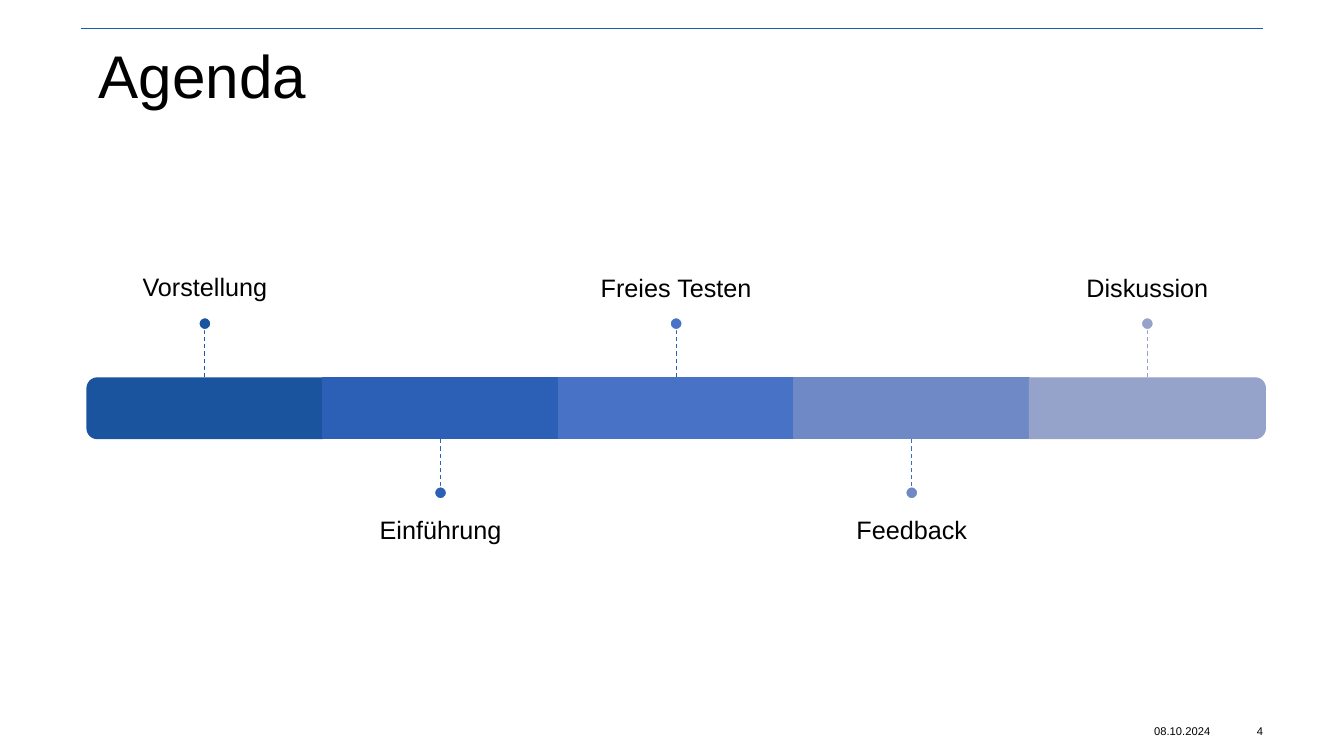
from dataclasses import dataclass

from lxml import etree
from pptx import Presentation
from pptx.dml.color import RGBColor
from pptx.enum import dml, shapes, text
from pptx.oxml.ns import qn
from pptx.util import Pt


@dataclass(frozen=True)
class Theme:
    font: str = "Arial"
    ink: str = "000000"
    paper: str = "FFFFFF"
    rule: str = "1E5CAF"
    title_size: float = 43
    label_size: float = 18
    footer_size: float = 8


THEME = Theme()

# label, segment colour, leader colour
STEPS = [
    ("Vorstellung", "1A539E", "1D57A5"),
    ("Einführung", "2C60B6", "2E63BB"),
    ("Freies Testen", "4772C5", "2A60B7"),
    ("Feedback", "6F89C6", "3B6CC6"),
    ("Diskussion", "95A3CB", "95A2CA"),
]
BAR_LEFT, BAR_TOP, BAR_HEIGHT = 62.25, 270, 43.2
STEP_WIDTH = 168.3
LEADER, DOT = 34.4, 8.8
LABEL_WIDTH, LABEL_HEIGHT, LABEL_GAP = 280, 150.5, 10.8


def rgb(value):
    return RGBColor.from_string(value)


def write(frame, words, size, align=text.PP_ALIGN.LEFT,
          anchor=text.MSO_ANCHOR.TOP, insets=(0, 0, 0, 0), spacing=1.0):
    """Fill a text frame with one paragraph; insets are left, top, right, bottom."""
    frame.word_wrap = True
    frame.auto_size = text.MSO_AUTO_SIZE.NONE
    frame.vertical_anchor = anchor
    (frame.margin_left, frame.margin_top,
     frame.margin_right, frame.margin_bottom) = map(Pt, insets)
    paragraph = frame.paragraphs[0]
    paragraph.alignment = align
    paragraph.line_spacing = spacing
    run = paragraph.add_run()
    run.text = words
    run.font.name = THEME.font
    run.font.size = Pt(size)
    run.font.color.rgb = rgb(THEME.ink)


def add_title(slide, words):
    title = slide.shapes.title
    title.left, title.top, title.width, title.height = map(Pt, (57.6, 20.2, 844.6, 70.6))
    write(title.text_frame, words, THEME.title_size, insets=(13, 13, 13, 13), spacing=0.9)


def add_text(slide, box, words, size, **layout):
    label = slide.shapes.add_textbox(*map(Pt, box))
    write(label.text_frame, words, size, **layout)


def add_line(slide, start, end, colour, width, dashed=False):
    line = slide.shapes.add_connector(
        shapes.MSO_CONNECTOR.STRAIGHT, *map(Pt, (*start, *end)))
    line.line.color.rgb = rgb(colour)
    line.line.width = Pt(width)
    if dashed:
        line.line.dash_style = dml.MSO_LINE.DASH
    etree.SubElement(line._element.spPr, qn("a:effectLst"))
    return line


def add_filled(slide, kind, box, fill, outline):
    shape = slide.shapes.add_shape(kind, *map(Pt, box))
    shape.shadow.inherit = False
    shape.fill.solid()
    shape.fill.fore_color.rgb = rgb(fill)
    shape.line.color.rgb = rgb(outline)
    shape.line.width = Pt(1)
    return shape


def add_segment(slide, index, centre, colour):
    """Add one bar segment; the first and last have rounded outer corners."""
    kinds = shapes.MSO_SHAPE
    if 0 < index < len(STEPS) - 1:
        box = (centre - STEP_WIDTH / 2, BAR_TOP, STEP_WIDTH, BAR_HEIGHT)
        return add_filled(slide, kinds.RECTANGLE, box, colour, colour)
    middle = BAR_TOP + BAR_HEIGHT / 2
    box = (centre - BAR_HEIGHT / 2, middle - STEP_WIDTH / 2, BAR_HEIGHT, STEP_WIDTH)
    cap = add_filled(slide, kinds.ROUND_2_SAME_RECTANGLE, box, colour, colour)
    cap.adjustments[0] = 0.167
    cap.rotation = 270 if index == 0 else 90
    return cap


def add_step(slide, index, words, colour, leader_colour):
    centre = BAR_LEFT + (index + 0.5) * STEP_WIDTH
    above = index % 2 == 0
    segment = add_segment(slide, index, centre, colour)
    if above:
        bar_edge = BAR_TOP
        dot_edge = bar_edge - LEADER
        dot_top = dot_edge - DOT
        label_top = dot_top - LABEL_HEIGHT
        anchor, insets = text.MSO_ANCHOR.BOTTOM, (0, 0, 0, LABEL_GAP)
    else:
        bar_edge = BAR_TOP + BAR_HEIGHT
        dot_edge = dot_top = bar_edge + LEADER
        label_top = dot_top + DOT
        anchor, insets = text.MSO_ANCHOR.TOP, (0, LABEL_GAP, 0, 0)
    add_text(slide, (centre - LABEL_WIDTH / 2, label_top, LABEL_WIDTH, LABEL_HEIGHT),
             words, THEME.label_size, align=text.PP_ALIGN.CENTER,
             anchor=anchor, insets=insets, spacing=0.9 if index == 0 else 1.0)
    leader = add_line(slide, (centre, dot_edge), (centre, bar_edge),
                      leader_colour, 0.75, dashed=True)
    if not segment.rotation:
        leader.end_connect(segment, 0 if above else 2)
    add_filled(slide, shapes.MSO_SHAPE.OVAL, (centre - DOT / 2, dot_top, DOT, DOT),
               colour, THEME.paper)


def main():
    deck = Presentation()
    deck.slide_width, deck.slide_height = Pt(960), Pt(540)
    slide = deck.slides.add_slide(deck.slide_layouts.get_by_name("Title Only"))
    add_line(slide, (57.6, 20.2), (902.2, 20.2), THEME.rule, 1)
    add_title(slide, "Agenda")
    middle = text.MSO_ANCHOR.MIDDLE
    add_text(slide, (824.4, 513.4, 48.2, 17.3), "08.10.2024", THEME.footer_size, anchor=middle)
    add_text(slide, (877, 513.4, 25.2, 17.3), "4", THEME.footer_size,
             align=text.PP_ALIGN.RIGHT, anchor=middle)
    for index, step in enumerate(STEPS):
        add_step(slide, index, *step)
    deck.save("out.pptx")


if __name__ == "__main__":
    main()
